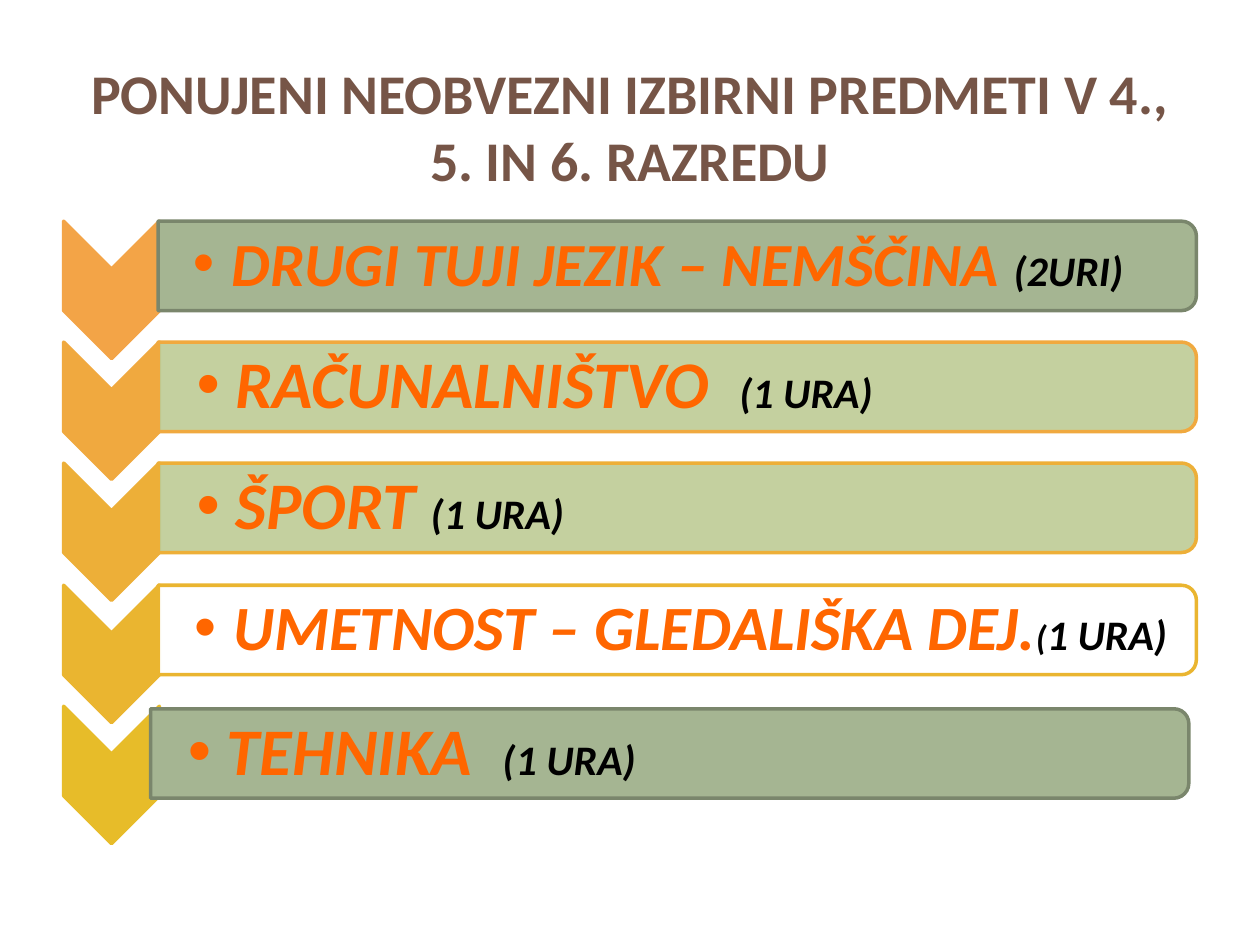
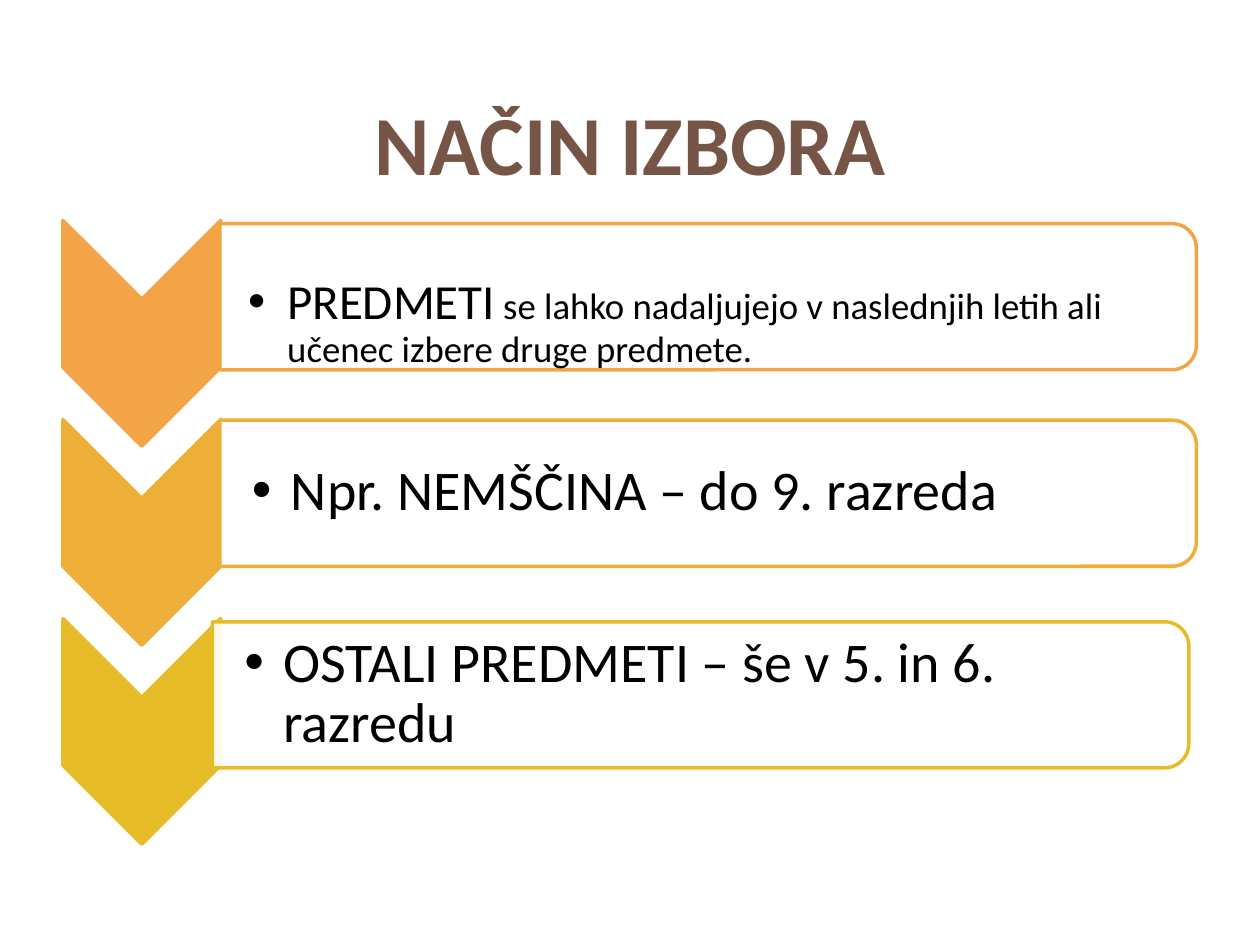
"""Build two slides on elective school subjects as stepped chevron lists."""
from lxml import etree
from pptx import Presentation
from pptx.dml.color import RGBColor
from pptx.enum.shapes import MSO_SHAPE
from pptx.enum.text import MSO_ANCHOR, PP_ALIGN
from pptx.oxml.ns import qn
from pptx.util import Pt

PX = 9144
FONT = "Calibri"
CHEVRON = MSO_SHAPE.CHEVRON
BAR = MSO_SHAPE.ROUND_2_SAME_RECTANGLE
MIDDLE, BOTTOM = MSO_ANCHOR.MIDDLE, MSO_ANCHOR.BOTTOM
CENTER = PP_ALIGN.CENTER
TITLE_ONLY = 5
HANGING = 31
BAR_ALPHA = "90000"

COLORS = {
    "title": "765547", "subject": "FF6600", "text": "000000", "white": "FFFFFF",
    "sage": "A5B592", "moss": "7A866C", "lime": "BECB95",
    "orange": "F3A447", "apricot": "F0A93F", "amber": "EDAF38",
    "honey": "EAB530", "gold": "E7BC29",
}


def add_turned_shape(slide, preset, left, middle, width, height, fill, line):
    """Add a preset shape turned 90 degrees that covers the given area."""
    shape = slide.shapes.add_shape(
        preset, round(left + (width - height) / 2) * PX, round(middle - width / 2) * PX,
        height * PX, width * PX)
    shape.rotation = 90
    shape.shadow.inherit = False
    shape.fill.solid()
    shape.fill.fore_color.rgb = RGBColor.from_string(COLORS[fill])
    shape.line.color.rgb = RGBColor.from_string(COLORS[line])
    shape.line.width = Pt(2)
    return shape


def format_run(run, size, color, bold, italic):
    """Set the font of one run."""
    run.font.name = FONT
    run.font.size = Pt(size)
    run.font.bold = bold
    run.font.italic = italic
    run.font.color.rgb = RGBColor.from_string(COLORS[color])


subjects = {
    "title": "PONUJENI NEOBVEZNI IZBIRNI PREDMETI V 4., 5. IN 6. RAZREDU",
    "title_size": 32, "emphasis": True,
    "first_middle": 230, "pitch": 96.25, "chevron": (76, 109), "bar": (126, 824, 71),
    "rows": [
        {"step": "orange", "fill": "sage", "line": "moss", "nudge": (0, -19), "inset": 27,
         "runs": [("DRUGI TUJI JEZIK – NEMŠČINA ", 35, "subject"), ("(2URI)", 24, "text")]},
        {"step": "apricot", "fill": "lime", "line": "apricot", "nudge": (0, -19), "inset": 30,
         "runs": [("RAČUNALNIŠTVO", 38, "subject"), (" ", 38, "subject"),
                  ("(1 URA)", 24, "text")]},
        {"step": "amber", "fill": "lime", "line": "amber", "nudge": (0, -19), "inset": 30,
         "runs": [("ŠPORT ", 38, "subject"), ("(1 URA)", 24, "text")]},
        {"step": "honey", "fill": "white", "line": "honey", "nudge": (0, -19), "inset": 28,
         "runs": [("UMETNOST – GLEDALIŠKA DEJ.", 36, "subject"), ("(", 20, "text"),
                  ("1 URA)", 24, "text")]},
        {"step": "gold", "fill": "sage", "line": "moss", "nudge": (-7, -17), "inset": 30,
         "runs": [("TEHNIKA", 38, "subject"), (" ", 38, "subject"), ("(1 URA)", 24, "text")]},
    ],
}
selection = {
    "title": "NAČIN IZBORA", "title_size": 48, "emphasis": False,
    "first_middle": 264, "pitch": 158, "chevron": (125, 179), "bar": (175, 775, 116),
    "rows": [
        {"step": "orange", "fill": "white", "line": "orange", "nudge": (0, -28), "inset": 22,
         "text_drop": 21,
         "runs": [("PREDMETI", 28, "text"),
                  (" se lahko nadaljujejo v naslednjih letih ali učenec izbere druge predmete.",
                   21, "text")]},
        {"step": "amber", "fill": "white", "line": "amber", "nudge": (0, -31), "inset": 25,
         "runs": [("Npr. NEMŠČINA – do 9. razreda", 32, "text")]},
        {"step": "gold", "fill": "white", "line": "gold", "nudge": (-6, -29), "inset": 25,
         "runs": [("OSTALI PREDMETI – še v 5. in 6. razredu", 32, "text")]},
    ],
}

prs = Presentation()
prs.slide_width, prs.slide_height = 1000 * PX, 750 * PX

for content in (subjects, selection):
    slide = prs.slides.add_slide(prs.slide_layouts[TITLE_ONLY])
    title = slide.shapes.title
    title.left, title.top, title.width, title.height = 50 * PX, 33 * PX, 900 * PX, 125 * PX
    title.text_frame.text = content["title"]
    title.text_frame.vertical_anchor = BOTTOM
    heading = title.text_frame.paragraphs[0]
    heading.alignment = CENTER
    format_run(heading.runs[0], content["title_size"], "title", True, False)

    step_width, step_height = content["chevron"]
    bar_left, bar_width, bar_height = content["bar"]
    for index, row in enumerate(content["rows"]):
        step_middle = round(content["first_middle"] + index * content["pitch"])
        add_turned_shape(slide, CHEVRON, 50, step_middle, step_width, step_height,
                         row["step"], row["step"])

        left = bar_left + row["nudge"][0]
        middle = step_middle + row["nudge"][1]
        bar = add_turned_shape(slide, BAR, left, middle, bar_width, bar_height,
                               row["fill"], row["line"])
        if row["fill"] != "sage":
            fill_color = bar.fill._xPr.find(qn("a:solidFill"))[0]
            etree.SubElement(fill_color, qn("a:alpha"), val=BAR_ALPHA)

        label_height = bar_height - 8
        label_top = middle - label_height // 2 + row.get("text_drop", 0)
        label = slide.shapes.add_textbox(left * PX, label_top * PX,
                                         (bar_width - 5) * PX, label_height * PX)
        frame = label.text_frame
        frame.word_wrap = True
        frame.vertical_anchor = MIDDLE
        frame.margin_left = row["inset"] * PX
        frame.margin_top = frame.margin_right = frame.margin_bottom = 2 * PX
        item = frame.paragraphs[0]
        properties = item._p.get_or_add_pPr()
        properties.set("marL", str(HANGING * PX))
        properties.set("indent", str(-HANGING * PX))
        etree.SubElement(properties, qn("a:buFont"), typeface="Arial")
        etree.SubElement(properties, qn("a:buChar"), char="•")
        item.line_spacing = 0.9
        for text, size, color in row["runs"]:
            run = item.add_run()
            run.text = text
            format_run(run, size, color, content["emphasis"], content["emphasis"])
            if text == " ":
                run.font._element.set("spc", "860")

prs.save("out.pptx")
